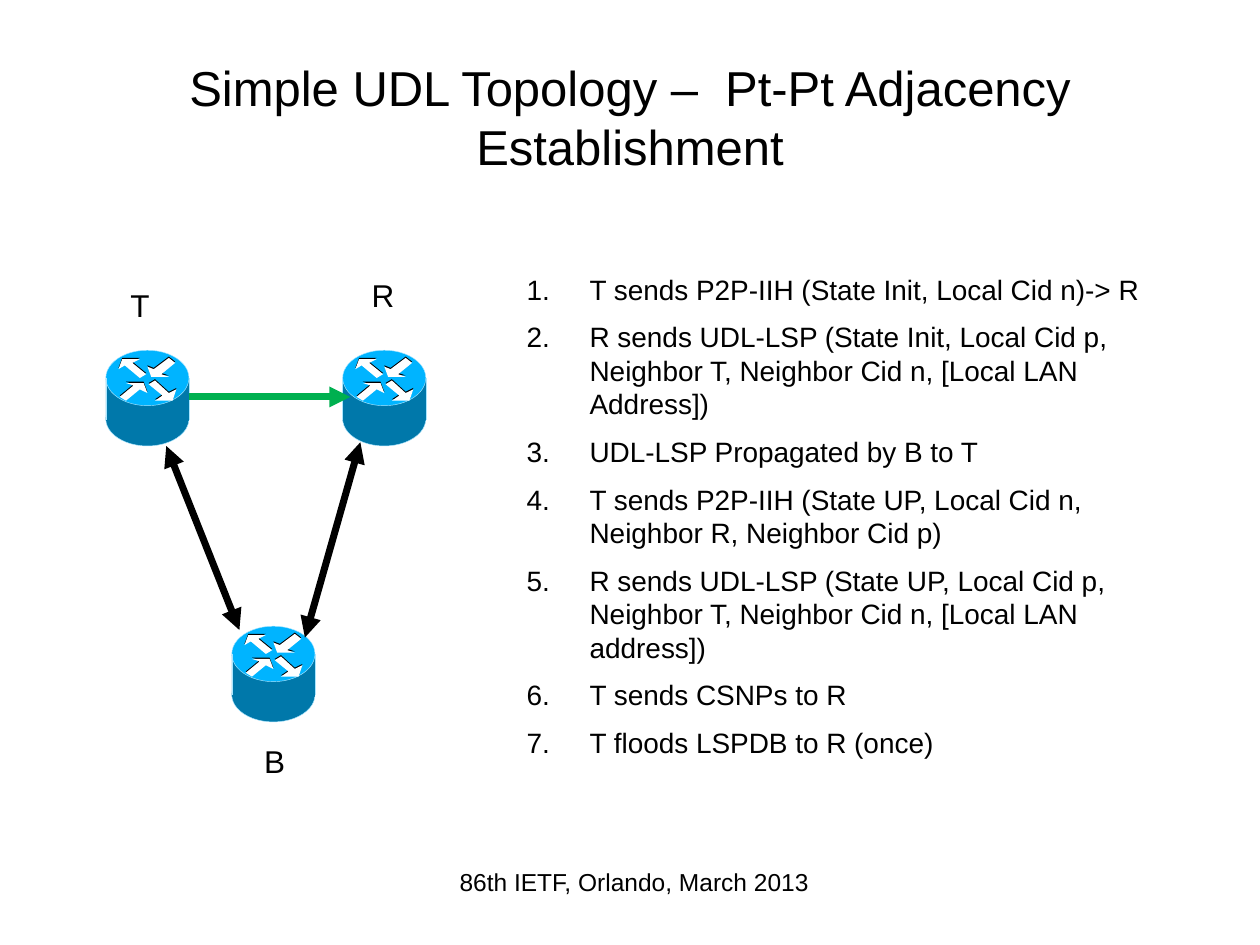
from dataclasses import dataclass

from pptx import Presentation
from pptx.dml.color import RGBColor
from pptx.enum.shapes import MSO_CONNECTOR, MSO_SHAPE
from pptx.enum.text import MSO_ANCHOR, PP_ALIGN
from pptx.oxml.ns import qn
from pptx.util import Pt
from lxml.etree import SubElement

PX = 9144  # 100 px to the inch


@dataclass(frozen=True)
class Theme:
    font: str = "Arial"
    ink: RGBColor = RGBColor(0, 0, 0)
    white: RGBColor = RGBColor(255, 255, 255)
    side: RGBColor = RGBColor(0x00, 0x78, 0xAA)
    top: RGBColor = RGBColor(0x00, 0xB4, 0xFF)
    edge: RGBColor = RGBColor(0xAA, 0xE6, 0xFF)
    one_way: RGBColor = RGBColor(0x00, 0xB0, 0x50)
    title: int = 28
    label: int = 18
    step: int = 16
    footer: int = 14


theme = Theme()
deck = Presentation()
deck.slide_width, deck.slide_height = 1000 * PX, 750 * PX
slide = deck.slides.add_slide(deck.slide_layouts[6])


def add_text(frame, lines, size, align=PP_ALIGN.CENTER, inset=(10, 5)):
    """Add a wrapped text box, one paragraph per line, and return its text frame."""
    box = slide.shapes.add_textbox(*(value * PX for value in frame))
    text = box.text_frame
    text.word_wrap = True
    text.margin_left = text.margin_right = inset[0] * PX
    text.margin_top = text.margin_bottom = inset[1] * PX
    text.text = "\n".join(lines)
    for para in text.paragraphs:
        para.alignment = align
        for span in para.runs:
            span.font.name = theme.font
            span.font.size = Pt(size)
            span.font.color.rgb = theme.ink
    return text


def add_line(shapes, start, end, color, width, arrows=()):
    """Add a straight line; arrows names the ends (headEnd, tailEnd) that get a triangle."""
    line = shapes.add_connector(
        MSO_CONNECTOR.STRAIGHT, *(value * PX for value in (*start, *end)))
    line.line.color.rgb = color
    line.line.width = Pt(width)
    for arrow in arrows:
        SubElement(line.line._get_or_add_ln(), qn(f"a:{arrow}"), type="triangle")
    SubElement(line._element.spPr, qn("a:effectLst"))


title = add_text((50, 30, 900, 125),
                 ["Simple UDL Topology –  Pt-Pt Adjacency Establishment"], theme.title)
title.vertical_anchor = MSO_ANCHOR.MIDDLE

# Numbered steps
steps = add_text((410, 212, 544, 449), [
    "T sends P2P-IIH (State Init, Local Cid n)-> R",
    "R sends UDL-LSP (State Init, Local Cid p, Neighbor T, Neighbor Cid n, [Local LAN Address])",
    "UDL-LSP Propagated by B to T",
    "T sends P2P-IIH (State UP, Local Cid n, Neighbor R, Neighbor Cid p)",
    "R sends UDL-LSP (State UP, Local Cid p, Neighbor T, Neighbor Cid n, [Local LAN address])",
    "T sends CSNPs to R",
    "T floods LSPDB to R (once)",
], theme.step, PP_ALIGN.LEFT, (8, 4))
for index, para in enumerate(steps.paragraphs):
    if index:
        para.space_before = Pt(theme.step / 2)
    properties = para._p.get_or_add_pPr()
    properties.set("marL", str(50 * PX))
    properties.set("indent", str(-50 * PX))
    SubElement(properties, qn("a:buFont"), typeface=theme.font)
    SubElement(properties, qn("a:buAutoNum"), type="arabicPeriod")

# Routers: a cylinder with four arrows on top, each arrow over its own shadow
routers = [(84, 278), (272, 278), (184, 497)]
cylinder = [
    (MSO_SHAPE.OVAL, (0, 33, 66, 43), theme.side, True),
    (MSO_SHAPE.RECTANGLE, (0, 23, 66, 33), theme.side, False),
    (MSO_SHAPE.OVAL, (0, 0, 66, 44), theme.top, True),
]
router_arrows = [
    [(32, 18), (27, 21), (15, 11), (10, 14), (13, 6), (27, 6), (21, 9)],
    [(34, 26), (39, 23), (50, 33), (56, 30), (53, 39), (39, 39), (45, 35)],
    [(55, 9), (50, 5), (38, 14), (33, 12), (36, 20), (50, 20), (44, 18)],
    [(11, 36), (16, 39), (27, 30), (33, 33), (30, 25), (16, 25), (22, 27)],
]
for left, top in routers:
    router = slide.shapes.add_group_shape().shapes
    for kind, (x, y, width, height), color, edged in cylinder:
        part = router.add_shape(kind, (left + x) * PX, (top + y) * PX,
                                width * PX, height * PX)
        part.shadow.inherit = False
        part.fill.solid()
        part.fill.fore_color.rgb = color
        if edged:
            part.line.color.rgb = theme.edge
            part.line.width = Pt(0.25)
        else:
            part.line.fill.background()
    for color, drop in ((theme.ink, 0), (theme.white, 1)):
        for outline in router_arrows:
            points = [(left + x, top + y + drop) for x, y in outline]
            builder = router.build_freeform(*points[0], scale=PX)
            builder.add_line_segments(points[1:], close=True)
            arrow = builder.convert_to_shape()
            arrow.shadow.inherit = False
            arrow.fill.solid()
            arrow.fill.fore_color.rgb = color
            arrow.line.fill.background()
    for x in (left + 66, left):
        add_line(router, (x, top + 22), (x, top + 55), theme.edge, 0.25)

for name, frame in (("R", (279, 215, 50, 77)),
                    ("T", (72, 223, 78, 77)),
                    ("B", (179, 585, 78, 77))):
    add_text(frame, [name], theme.label, inset=(8, 4))

# Links
both_ends = ("headEnd", "tailEnd")
add_line(slide.shapes, (132, 354), (190, 500), theme.ink, 4, both_ends)
add_line(slide.shapes, (242, 506), (286, 351), theme.ink, 4, both_ends)
add_line(slide.shapes, (150, 315), (278, 315), theme.one_way, 4, ("tailEnd",))

add_text((287, 683, 433, 52), ["86th IETF, Orlando, March 2013"], theme.footer)

deck.save("out.pptx")
